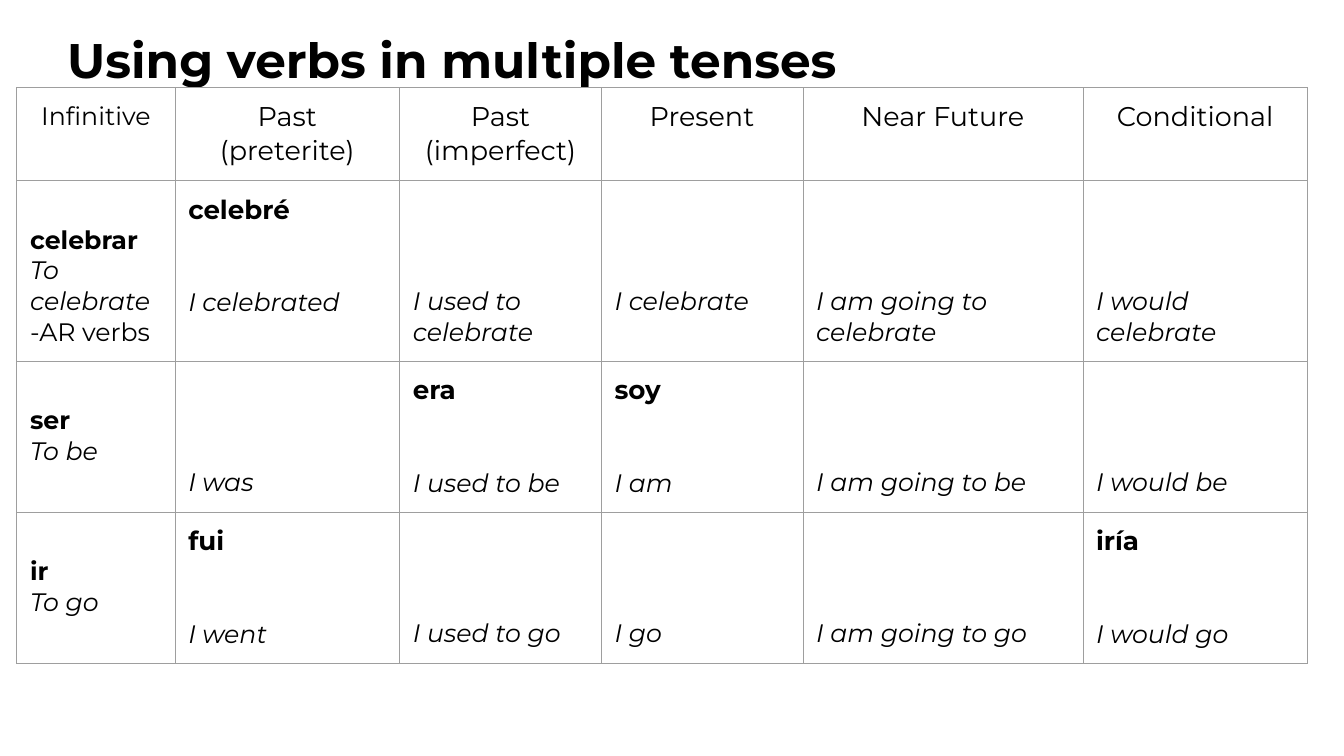
from dataclasses import dataclass

from lxml import etree
from pptx import Presentation
from pptx import util as u
from pptx.dml.color import RGBColor
from pptx.enum import text
from pptx.oxml.ns import qn

EMU_PER_PX = 9525


def px(n: int) -> u.Emu:
    return u.Emu(n * EMU_PER_PX)


@dataclass(frozen=True)
class Theme:
    font: str = "Montserrat"
    ink: str = "000000"
    paper: str = "FFFFFF"
    rule: str = "9E9E9E"
    title: int = 52
    header: int = 29
    answer: int = 28
    body: int = 27


@dataclass(frozen=True)
class Line:
    text: str
    size: int
    bold: bool = False
    italic: bool = False
    before: int = 0
    centred: bool = False


@dataclass(frozen=True)
class Verb:
    """A verb row; each form pairs a Spanish answer (maybe empty) with English."""
    infinitive: str
    meaning: str
    forms: tuple[tuple[str, str], ...]
    note: str = ""


THEME = Theme()
PAD = 19
LINE = 44  # height of one body line
COLUMNS = [226, 321, 288, 288, 400, 321]
ROWS = [133, 257, 216, 216]
HEADERS = ["Infinitive", "Past (preterite)", "Past (imperfect)", "Present",
           "Near Future", "Conditional"]
VERBS = [
    Verb("celebrar", "To celebrate",
         (("celebré", "I celebrated"), ("", "I used to celebrate"), ("", "I celebrate"),
          ("", "I am going to celebrate"), ("", "I would celebrate")), "-AR verbs"),
    Verb("ser", "To be",
         (("", "I was"), ("era", "I used to be"), ("soy", "I am"),
          ("", "I am going to be"), ("", "I would be"))),
    Verb("ir", "To go",
         (("fui", "I went"), ("", "I used to go"), ("", "I go"),
          ("", "I am going to go"), ("iría", "I would go"))),
]


def style(p, line: Line) -> None:
    p.text = line.text
    p.alignment = text.PP_ALIGN.CENTER if line.centred else text.PP_ALIGN.LEFT
    p.space_before = px(line.before)
    f = p.font
    f.name, f.size, f.bold, f.italic = THEME.font, u.Pt(line.size), line.bold, line.italic
    f.color.rgb = RGBColor.from_string(THEME.ink)


def add_borders(cell) -> None:
    tc_pr = cell._tc.get_or_add_tcPr()
    for i, side in enumerate(("lnL", "lnR", "lnT", "lnB")):
        ln = etree.Element(qn(f"a:{side}"), w=str(u.Pt(0.75)))
        fill = etree.SubElement(ln, qn("a:solidFill"))
        etree.SubElement(fill, qn("a:srgbClr"), val=THEME.rule)
        tc_pr.insert(i, ln)


def fill_cell(cell, lines: list[Line], skipped: int = 0) -> None:
    """Write the lines below the given number of skipped body lines."""
    cell.margin_left = cell.margin_right = cell.margin_bottom = px(PAD)
    cell.margin_top = px(PAD + skipped * LINE)
    cell.vertical_anchor = text.MSO_ANCHOR.TOP
    cell.fill.solid()
    cell.fill.fore_color.rgb = RGBColor.from_string(THEME.paper)
    add_borders(cell)
    tf = cell.text_frame
    for i, line in enumerate(lines):
        style(tf.add_paragraph() if i else tf.paragraphs[0], line)


def fill_form(cell, answer: str, english: str) -> None:
    if answer:
        fill_cell(cell, [Line(answer, THEME.answer, bold=True),
                         Line(english, THEME.body, italic=True, before=2 * LINE)])
    else:
        fill_cell(cell, [Line(english, THEME.body, italic=True)], skipped=3)


def add_title(s, wording: str) -> None:
    title = s.shapes.title
    title.left, title.top, title.width, title.height = px(96), px(30), px(1727), px(172)
    tf = title.text_frame
    tf.margin_left = tf.margin_top = tf.margin_right = tf.margin_bottom = 0
    tf.vertical_anchor = text.MSO_ANCHOR.TOP
    tf.auto_size = text.MSO_AUTO_SIZE.NONE
    tf.word_wrap = True
    p = tf.paragraphs[0]
    style(p, Line(wording, THEME.title, bold=True))
    p.line_spacing = 1.15


def add_verb_table(s) -> None:
    table = s.shapes.add_table(len(ROWS), len(COLUMNS), px(24), px(125),
                               px(sum(COLUMNS)), px(sum(ROWS))).table
    table.first_row = table.horz_banding = False
    for column, width in zip(table.columns, COLUMNS):
        column.width = px(width)
    for row, height in zip(table.rows, ROWS):
        row.height = px(height)

    for c, header in enumerate(HEADERS):
        size = THEME.header if c else THEME.body
        fill_cell(table.cell(0, c), [Line(header, size, centred=True)])

    for r, verb in enumerate(VERBS, start=1):
        lines = [Line(verb.infinitive, THEME.body, bold=True),
                 Line(verb.meaning, THEME.body, italic=True)]
        if verb.note:
            lines.append(Line(verb.note, THEME.body))
        fill_cell(table.cell(r, 0), lines, skipped=1)
        for c, (answer, english) in enumerate(verb.forms, start=1):
            fill_form(table.cell(r, c), answer, english)


def main() -> None:
    prs = Presentation()
    prs.slide_width, prs.slide_height = px(1920), px(1080)
    s = prs.slides.add_slide(prs.slide_layouts[5])
    add_title(s, "Using verbs in multiple tenses")
    add_verb_table(s)
    prs.save("out.pptx")


if __name__ == "__main__":
    main()
